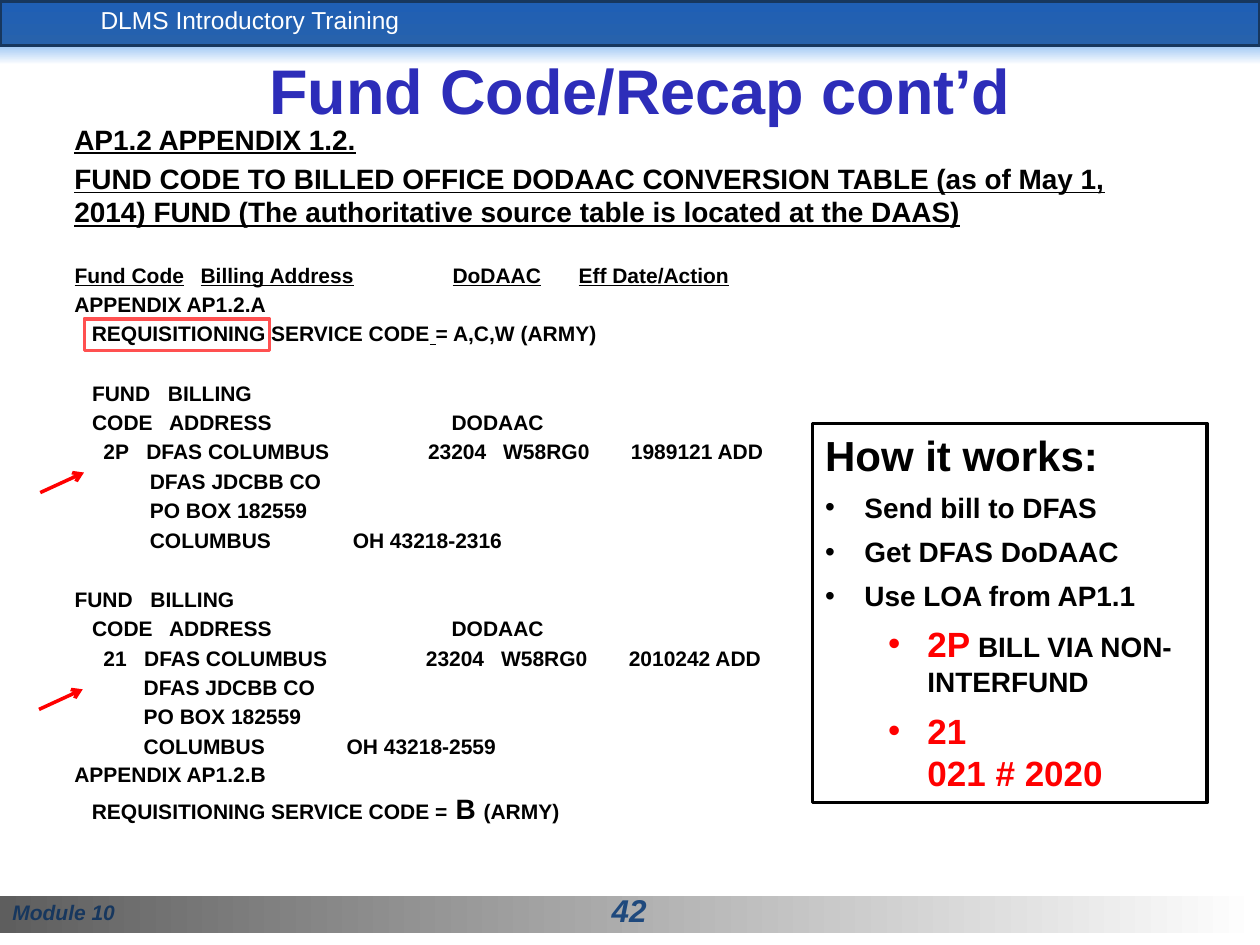
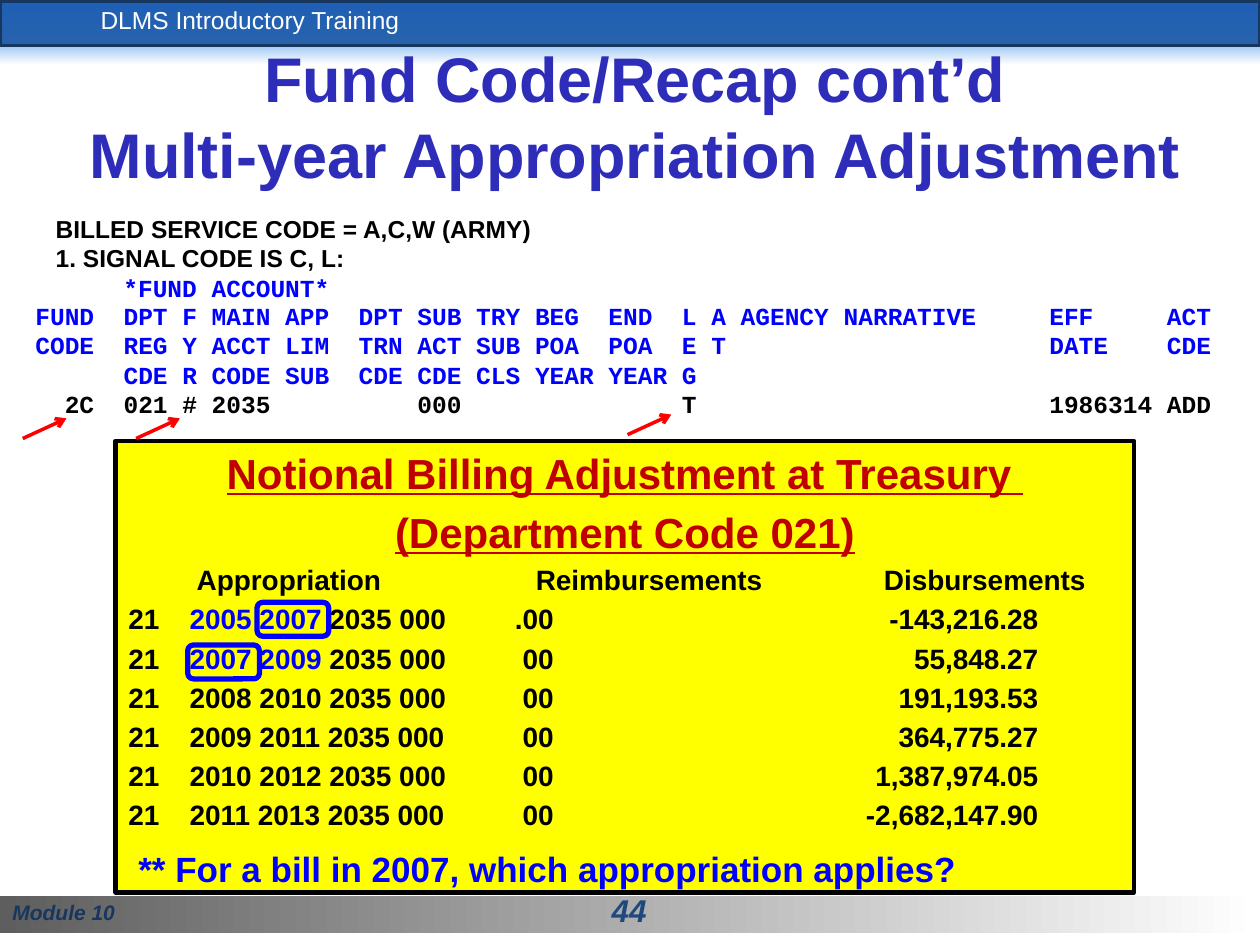
from lxml.etree import SubElement
from pptx import Presentation
from pptx.dml.color import RGBColor
from pptx.enum.shapes import MSO_CONNECTOR as Connector, MSO_SHAPE as Preset
from pptx.enum.text import MSO_ANCHOR as Anchor, MSO_AUTO_SIZE as AutoSize, PP_ALIGN as Align
from pptx.oxml.ns import qn
from pptx.util import Pt

BLACK, WHITE, RED, BLUE = "000000", "FFFFFF", "FF0000", "0000FF"
NAVY, INDIGO, YELLOW = "17375E", "2D2DB9", "FFFF00"
COURIER_WIDTH = 8.4
PLAIN_TABLE_STYLE = "{2D5ABB26-0587-4C30-8999-92F81FD0307C}"


def color(value):
    return RGBColor.from_string(value)


def write(frame, runs, size=12, hue=BLACK, bold=True, italic=False, underline=False,
          font="Arial", align=Align.LEFT, before=0, after=0, margin=0, indent=0,
          bullet=None):
    first = frame.paragraphs[0]
    paragraph = frame.add_paragraph() if first.runs else first
    paragraph.alignment = align
    paragraph.space_before = Pt(before if first.runs else 0)
    paragraph.space_after = Pt(after)
    properties = paragraph._p.get_or_add_pPr()
    properties.set("marL", str(Pt(margin)))
    properties.set("indent", str(Pt(indent)))
    if bullet:
        SubElement(properties, qn("a:buFont"), typeface="Arial")
        SubElement(properties, qn("a:buChar"), char=bullet)
    else:
        SubElement(properties, qn("a:buNone"))
    base = dict(size=size, hue=hue, underline=underline)
    for text, changes in [(runs, {})] if isinstance(runs, str) else runs:
        look = {**base, **changes}
        run = paragraph.add_run()
        run.text = text
        run.font.name = font
        run.font.size = Pt(look["size"])
        run.font.bold = bold
        run.font.italic = italic
        run.font.underline = look["underline"]
        run.font.color.rgb = color(look["hue"])


def prepare(frame, anchor=Anchor.TOP, wrap=True):
    frame.word_wrap = wrap
    frame.auto_size = AutoSize.NONE
    frame.vertical_anchor = anchor
    return frame


def place(shape, left, top, width, height):
    shape.left, shape.top = Pt(left), Pt(top)
    shape.width, shape.height = Pt(width), Pt(height)


def add_label(slide, bounds, text, wrap=True, anchor=Anchor.MIDDLE, **look):
    box = slide.shapes.add_textbox(*map(Pt, bounds))
    write(prepare(box.text_frame, anchor, wrap), text, **look)
    return box


def add_outline(slide, preset, bounds, line, weight):
    shape = slide.shapes.add_shape(preset, *map(Pt, bounds))
    shape.shadow.inherit = False
    shape.fill.background()
    shape.line.color.rgb = color(line)
    shape.line.width = Pt(weight)
    return shape


def add_band(slide, bounds, start, end, angle):
    band = slide.shapes.add_shape(Preset.RECTANGLE, *map(Pt, bounds))
    band.shadow.inherit = False
    band.fill.gradient()
    band.fill.gradient_angle = angle
    for stop, hue in zip(band.fill.gradient_stops, (start, end)):
        stop.color.rgb = color(hue)
    band.line.fill.background()
    slide.shapes._spTree.insert(2, band._element)
    return band


def add_arrow(slide, left, top, width=25, rise=11.5):
    arrow = slide.shapes.add_connector(
        Connector.STRAIGHT, Pt(left), Pt(top), Pt(left + width), Pt(top - rise))
    arrow.line.color.rgb = color(RED)
    arrow.line.width = Pt(2)
    SubElement(arrow.line._get_or_add_ln(), qn("a:tailEnd"), type="arrow")
    SubElement(arrow._element.spPr, qn("a:effectLst"))


def add_grid(slide, left, top, row_height, edges, rows):
    table = slide.shapes.add_table(
        len(rows), len(edges) - 1, Pt(left), Pt(top),
        Pt(edges[-1]), Pt(row_height * len(rows))).table
    table.first_row = table.horz_banding = False
    table._tbl.tblPr.find(qn("a:tableStyleId")).text = PLAIN_TABLE_STYLE
    for column, start, end in zip(table.columns, edges, edges[1:]):
        column.width = Pt(end - start)
    for row in table.rows:
        row.height = Pt(row_height)
    for cell in table.iter_cells():
        cell.fill.background()
        cell.margin_left = cell.margin_right = cell.margin_top = cell.margin_bottom = 0
        cell.vertical_anchor = Anchor.MIDDLE
    for row_index, entries in enumerate(rows):
        starts = [0] + [sum(edge <= x for edge in edges) - 1 for x, *_ in entries[1:]]
        ends = starts[1:] + [len(edges) - 1]
        for (x, text, look), start, end in zip(entries, starts, ends):
            cell = table.cell(row_index, start)
            if end - start > 1:
                cell.merge(table.cell(row_index, end - 1))
            write(cell.text_frame, text, margin=x - edges[start], **look)


def add_training_slide(presentation, number, title_lines, title_bounds):
    slide = presentation.slides.add_slide(presentation.slide_layouts[1])
    add_band(slide, (0, 27, 720, 10), "A9CDF5", WHITE, 270)
    header = add_band(slide, (0, 0.5, 720, 26), "1F5FB5", "2762AC", 270)
    header.line.color.rgb = color(NAVY)
    header.line.width = Pt(2.5)
    add_band(slide, (0, 512, 720, 21), "5E5E5E", WHITE, 0)
    add_label(slide, (50.4, 0, 333, 23), "DLMS Introductory Training",
              size=14, hue=WHITE, bold=False)
    add_label(slide, (0, 510.5, 120, 21), "Module 10", hue=NAVY, italic=True)
    add_label(slide, (342, 506, 35, 28), number, wrap=False, size=18,
              hue="1F497D", italic=True, align=Align.CENTER)
    place(slide.shapes.title, *title_bounds)
    frame = prepare(slide.shapes.title.text_frame, Anchor.MIDDLE)
    for line in title_lines:
        write(frame, line, size=36, hue=INDIGO, align=Align.CENTER)
    return slide


def add_account(slide, top, code, action, zip_code, heading, shift, address):
    details = [(16.5, code), (41 + shift, "DFAS COLUMBUS"), (202 + shift, "23204"),
               (245 + shift, "W58RG0"), (318 + shift, f"{action} ADD")]
    rows = [[(heading, "FUND"), (heading + 43.4, "BILLING")],
            [(10, "CODE"), (54, "ADDRESS"), (215.5, "DODAAC")],
            details,
            [(address, "DFAS JDCBB CO")],
            [(address, "PO BOX 182559")],
            [(address, "COLUMBUS"), (address + 116, f"OH {zip_code}")]]
    add_grid(slide, 42.6, top, 16.8, [0, 39, 50, 155, 200, 243, 316, 410],
             [[(x, text, {}) for x, text in row] for row in rows])


def fill_conversion_table(slide):
    body = slide.placeholders[1]
    place(body, 35.3, 66.2, 620, 420)
    frame = prepare(body.text_frame)
    for heading in ("AP1.2 APPENDIX 1.2.",
                    "FUND CODE TO BILLED OFFICE DODAAC CONVERSION TABLE (as of May 1, 2014) "
                    "FUND (The authoritative source table is located at the DAAS)"):
        write(frame, heading, size=16, underline=True, before=3.2)
    write(frame, "APPENDIX AP1.2.A", before=36)
    write(frame, [("REQUISITIONING SERVICE CODE", {}), (" ", {"underline": True}),
                  ("= A,C,W (ARMY)", {})], before=2.4, indent=10)
    write(frame, "APPENDIX AP1.2.B", before=237.6)
    write(frame, [("REQUISITIONING SERVICE CODE =", {}), (" B ", {"size": 16}),
                  ("(ARMY)", {})], before=2.4, indent=10)

    headings = zip((0, 72, 216, 288),
                   ("Fund Code", "Billing Address", "DoDAAC", "Eff Date/Action"))
    add_grid(slide, 42.6, 149.3, 16.8, [0, 72, 216, 288, 400],
             [[(x, text, {"underline": True}) for x, text in headings]])
    add_account(slide, 216.7, "2P", "1989121", "43218-2316", 10, 0, 43)
    add_account(slide, 334.5, "21", "2010242", "43218-2559", 0, -1.2, 39.5)


def add_how_it_works(slide):
    box = add_outline(slide, Preset.RECTANGLE, (464.4, 242, 225.4, 216.7), BLACK, 2)
    frame = prepare(box.text_frame)
    write(frame, "How it works:", size=24, after=6)
    for step in ("Send bill to DFAS", "Get DFAS DoDAAC", "Use LOA from AP1.1"):
        write(frame, step, size=16, after=6, margin=22.5, indent=-22.5, bullet="•")
    nested = dict(size=20, hue=RED, margin=58.5)
    write(frame, [("2P", {}), (" BILL VIA NON-INTERFUND", {"size": 16, "hue": BLACK})],
          after=6, indent=-22.5, bullet="•", **nested)
    write(frame, "21", indent=-22.5, bullet="•", **nested)
    write(frame, "021 # 2020", **nested)


def add_fund_account(slide):
    box = add_label(slide, (13, 118.8, 691, 58), "BILLED SERVICE CODE = A,C,W (ARMY)",
                    anchor=Anchor.TOP, size=14, indent=11.7)
    write(box.text_frame, "1. SIGNAL CODE IS C, L:", size=14, indent=11.7)
    listing = dict(size=14, hue=BLUE, font="Courier New")
    write(box.text_frame, "*FUND ACCOUNT*", indent=6 * COURIER_WIDTH, **listing)
    columns = (0, 6, 10, 12, 17, 22, 26, 30, 34, 39, 44, 46, 48, 69, 77, 82)
    edges = [column * COURIER_WIDTH for column in columns]
    headings = (
        "FUND|DPT|F|MAIN|APP|DPT|SUB|TRY|BEG|END|L|A|AGENCY NARRATIVE|EFF|ACT",
        "CODE|REG|Y|ACCT|LIM|TRN|ACT|SUB|POA|POA|E|T||DATE|CDE",
        "|CDE|R|CODE|SUB|CDE|CDE|CLS|YEAR|YEAR|G")
    rows = [[(x, text, listing) for x, text in zip(edges, heading.split("|")) if text]
            for heading in headings]
    values = {2: "2C", 6: "021", 10: "#", 12: "2035", 26: "000", 44: "T",
              69: "1986314", 77: "ADD"}
    rows.append([(column * COURIER_WIDTH, text, {**listing, "hue": BLACK})
                 for column, text in values.items()])
    add_grid(slide, 20.2, 173.9, 16.8, edges, rows)


def fill_billing_adjustment(slide):
    body = slide.placeholders[1]
    place(body, 66.2, 252, 581.8, 257.8)
    body.fill.solid()
    body.fill.fore_color.rgb = color(YELLOW)
    body.line.color.rgb = color(BLACK)
    body.line.width = Pt(2.75)
    frame = prepare(body.text_frame)
    for heading in ("Notional Billing Adjustment at Treasury ", "(Department Code 021)"):
        write(frame, heading, size=24, hue="C00000", underline=True,
              align=Align.CENTER, before=4.8)

    plain = {"size": 16}
    figure = {"size": 16, "align": Align.RIGHT}
    add_grid(slide, 73.4, 320.8, 22.4, [0, 232, 431, 565],
             [[(39, "Appropriation", plain), (232.8, "Reimbursements", plain),
               (431.7, "Disbursements", plain)]])
    amounts = [("2005 2007", BLUE, ".00", "-143,216.28"),
               ("2007 2009", BLUE, "00", "55,848.27"),
               ("2008 2010", BLACK, "00", "191,193.53"),
               ("2009 2011", BLACK, "00", "364,775.27"),
               ("2010 2012", BLACK, "00", "1,387,974.05"),
               ("2011 2013", BLACK, "00", "-2,682,147.90")]
    add_grid(slide, 73.4, 343.2, 22.4, [0, 35, 190, 243, 520],
             [[(0, "21", plain),
               (35, [(f"{years} ", {"hue": hue}), ("2035 000", {})], plain),
               (190, reimbursement, figure), (243, disbursement, figure)]
              for years, hue, reimbursement, disbursement in amounts])


def main():
    presentation = Presentation()
    presentation.slide_width, presentation.slide_height = Pt(720), Pt(540)

    recap = add_training_slide(presentation, "42", ["Fund Code/Recap cont’d"],
                               (41.8, 36, 648, 30.2))
    fill_conversion_table(recap)
    add_how_it_works(recap)
    add_arrow(recap, 23, 281.5)
    add_arrow(recap, 22.3, 405.4)
    add_outline(recap, Preset.RECTANGLE, (48.2, 182.2, 105.8, 18), "FF5050", 2)

    adjustment = add_training_slide(
        presentation, "44",
        ["Fund Code/Recap cont’d", "Multi-year Appropriation Adjustment"],
        (41.8, 36, 642.2, 60))
    add_fund_account(adjustment)
    fill_billing_adjustment(adjustment)
    for left, top in ((146.9, 344.2), (107.3, 368.6)):
        add_outline(adjustment, Preset.ROUNDED_RECTANGLE, (left, top, 41, 19.4), BLUE, 3)
    for left, top in ((13, 250.6), (77.8, 250.6), (358.6, 248.4)):
        add_arrow(adjustment, left, top)
    add_label(adjustment, (72, 480.2, 485, 31.7),
              "** For a bill in 2007, which appropriation applies?",
              wrap=False, size=20, hue=BLUE)

    presentation.save("out.pptx")


if __name__ == "__main__":
    main()
